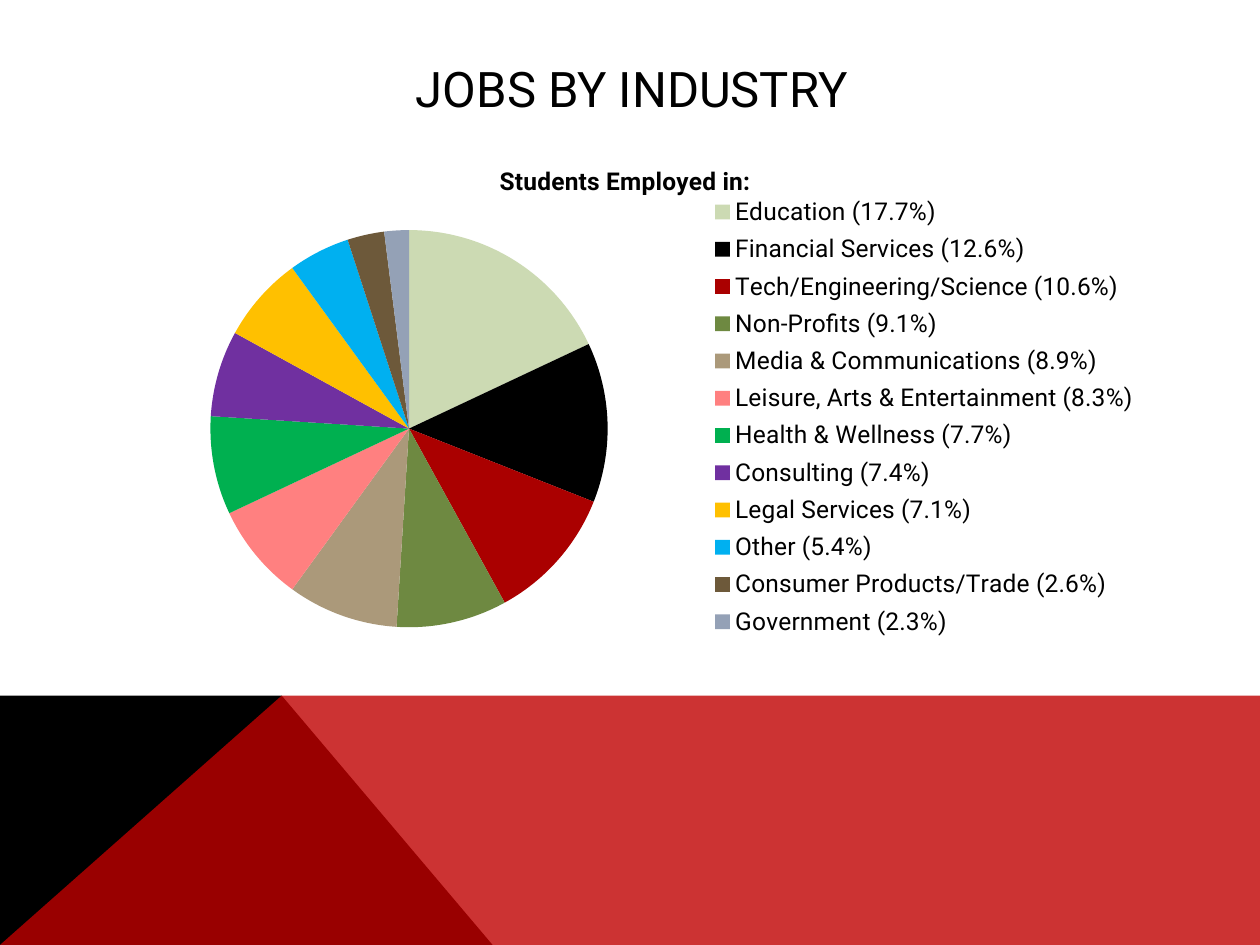
from lxml.etree import SubElement
from pptx import Presentation
from pptx.chart.data import CategoryChartData
from pptx.dml.color import RGBColor
from pptx.enum.chart import XL_CHART_TYPE, XL_LEGEND_POSITION
from pptx.enum.text import MSO_ANCHOR, PP_ALIGN
from pptx.oxml import parse_xml
from pptx.oxml.ns import nsdecls, qn
from pptx.util import Pt

FONT = "Roboto"
BLACK = RGBColor(0x00, 0x00, 0x00)
RED = RGBColor(0xC0, 0x00, 0x00)
CHART_W, CHART_H = 592, 281.5

# Industry, percentage of students, slice colour
INDUSTRIES = [
    ("Education", 17.7, RGBColor(0xCC, 0xDA, 0xB3)),
    ("Financial Services", 12.6, BLACK),
    ("Tech/Engineering/Science", 10.6, RGBColor(0xAA, 0x00, 0x00)),
    ("Non-Profits", 9.1, RGBColor(0x6E, 0x89, 0x41)),
    ("Media & Communications", 8.9, RGBColor(0xAB, 0x99, 0x7A)),
    ("Leisure, Arts & Entertainment", 8.3, RGBColor(0xFF, 0x80, 0x80)),
    ("Health & Wellness", 7.7, RGBColor(0x00, 0xB0, 0x50)),
    ("Consulting", 7.4, RGBColor(0x70, 0x30, 0xA0)),
    ("Legal Services", 7.1, RGBColor(0xFF, 0xC0, 0x00)),
    ("Other", 5.4, RGBColor(0x00, 0xB0, 0xF0)),
    ("Consumer Products/Trade", 2.6, RGBColor(0x6D, 0x59, 0x3A)),
    ("Government", 2.3, RGBColor(0x94, 0xA1, 0xB6)),
]


def set_font(font, size, bold=False):
    font.name = FONT
    font.size = Pt(size)
    font.bold = bold
    font.color.rgb = BLACK


def add_polygon(s, points, color, opacity=100):
    start, *rest = [(Pt(x), Pt(y)) for x, y in points]
    builder = s.shapes.build_freeform(*start)
    builder.add_line_segments(rest, close=True)
    sp = builder.convert_to_shape()
    sp.shadow.inherit = False
    sp.fill.solid()
    sp.fill.fore_color.rgb = color
    sp.line.fill.background()
    if opacity < 100:
        clr = sp.fill._xPr.find(".//" + qn("a:srgbClr"))
        SubElement(clr, qn("a:alpha"), val=str(opacity * 1000))


def add_title(s, text):
    tf = s.shapes.add_textbox(Pt(65), Pt(29), Pt(592), Pt(43)).text_frame
    tf.word_wrap = True
    tf.vertical_anchor = MSO_ANCHOR.MIDDLE
    p = tf.paragraphs[0]
    p.text = text
    p.alignment = PP_ALIGN.CENTER
    set_font(p.font, 28)


def set_layout(element, index, x, y, w=None, h=None, inner=False):
    """Place a chart part, in points from the chart's top left corner."""
    for old in element.findall(qn("c:layout")):
        element.remove(old)
    target = '<c:layoutTarget val="inner"/>' if inner else ""
    size = f'<c:w val="{w / CHART_W}"/><c:h val="{h / CHART_H}"/>' if w else ""
    element.insert(index, parse_xml(
        f'<c:layout {nsdecls("c")}><c:manualLayout>{target}'
        '<c:xMode val="edge"/><c:yMode val="edge"/>'
        f'<c:x val="{x / CHART_W}"/><c:y val="{y / CHART_H}"/>{size}'
        '</c:manualLayout></c:layout>'))


def add_pie(s, title):
    data = CategoryChartData(number_format="0")
    data.categories = [f"{name} ({value}%)" for name, value, _ in INDUSTRIES]
    data.add_series(title, [round(value) for _, value, _ in INDUSTRIES])
    chart = s.shapes.add_chart(XL_CHART_TYPE.PIE, Pt(65), Pt(86.5),
                               Pt(CHART_W), Pt(CHART_H), data).chart
    set_font(chart.font, 18)

    # Chart title
    chart.has_title = True
    p = chart.chart_title.text_frame.paragraphs[0]
    p.text = title
    set_font(p.font, 14, bold=True)
    set_layout(chart.chart_title._element, 1, 218, 4.5)

    # Slices
    plot = chart.plots[0]
    plot.vary_by_categories = True
    for i, (_, _, color) in enumerate(INDUSTRIES):
        fill = plot.series[0].points[i].format.fill
        fill.solid()
        fill.fore_color.rgb = color
    plot_area = chart._chartSpace.chart.plotArea
    set_layout(plot_area, 0, 55, 45, 227.5, 227, inner=True)

    # Legend
    chart.has_legend = True
    legend = chart.legend
    legend.position = XL_LEGEND_POSITION.RIGHT
    legend.include_in_layout = False
    set_font(legend.font, 14)
    set_layout(legend._element, 1, 339, 22, 248.5, 260)


def main():
    prs = Presentation()
    prs.slide_width, prs.slide_height = Pt(720), Pt(540)
    s = prs.slides.add_slide(prs.slide_layouts[6])

    # Footer band: black wedge under a translucent red one
    top, peak, bottom = 397.5, 161, 540
    add_polygon(s, [(0, bottom), (0, top), (peak, top), (281.5, bottom)], BLACK)
    add_polygon(s, [(0, bottom), (peak, top), (720, top), (720, bottom)], RED, 80)

    add_title(s, "JOBS BY INDUSTRY")
    add_pie(s, "Students Employed in:")
    prs.save("out.pptx")


if __name__ == "__main__":
    main()
